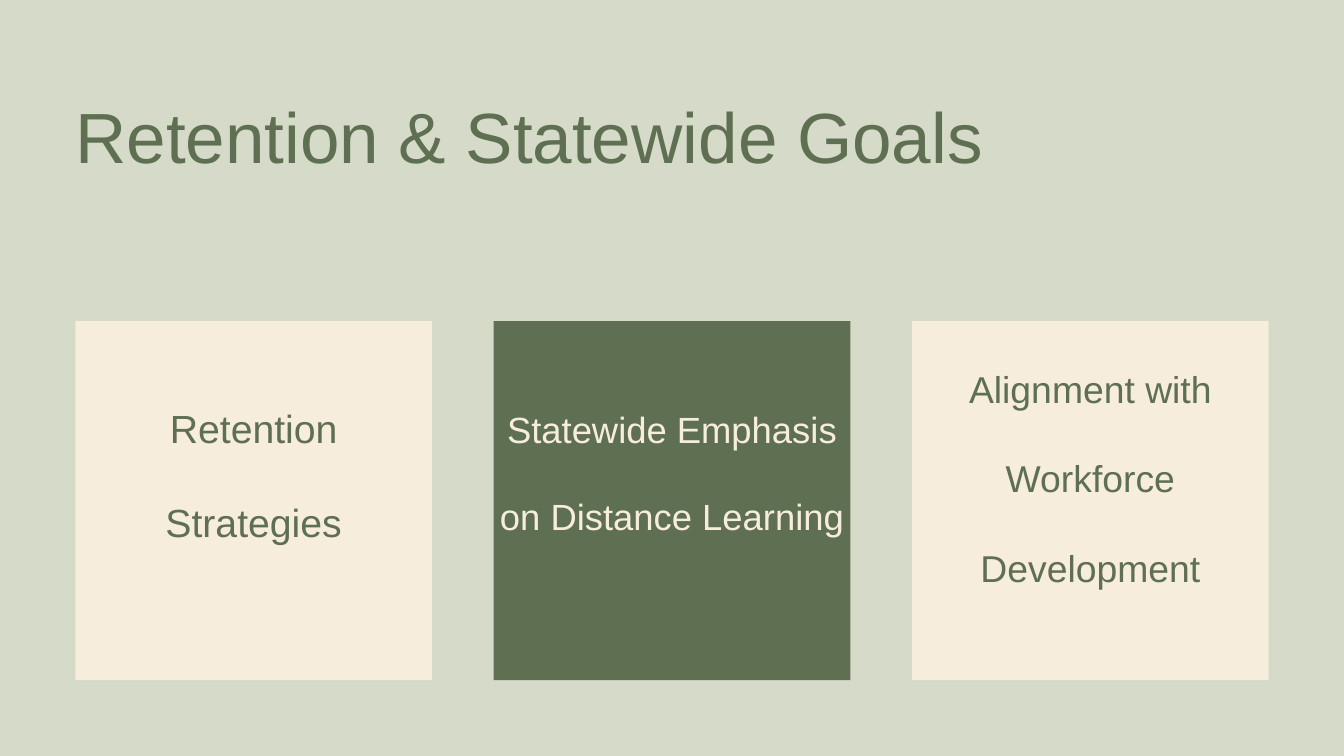
from dataclasses import dataclass

from pptx import Presentation
from pptx.dml.color import RGBColor
from pptx.enum.shapes import MSO_SHAPE
from pptx.enum.text import MSO_ANCHOR, MSO_AUTO_SIZE, PP_ALIGN
from pptx.util import Inches, Pt

RECTANGLE = MSO_SHAPE.RECTANGLE
TOP, MIDDLE, BOTTOM = MSO_ANCHOR.TOP, MSO_ANCHOR.MIDDLE, MSO_ANCHOR.BOTTOM
LEFT, CENTER = PP_ALIGN.LEFT, PP_ALIGN.CENTER
NO_AUTOFIT = MSO_AUTO_SIZE.NONE
TITLE_ONLY = 5


@dataclass(frozen=True)
class Theme:
    sage: RGBColor = RGBColor.from_string("D6DAC8")
    forest: RGBColor = RGBColor.from_string("5F6F52")
    cream: RGBColor = RGBColor.from_string("F6EDDD")
    font: str = "Arial"
    title_size: float = 76.1
    retention_size: float = 42
    emphasis_size: float = 39
    alignment_size: float = 40


THEME = Theme()
MARGIN = 1.12
CARD_TOP, CARD_WIDTH, CARD_HEIGHT = 4.78, 5.31, 5.34
CARD_STEP = 6.225

GOALS = [
    ("Retention Strategies", THEME.retention_size, THEME.cream, THEME.forest, MIDDLE, 1.48),
    ("Statewide Emphasis on Distance Learning", THEME.emphasis_size, THEME.forest, THEME.cream, MIDDLE, 1.48),
    ("Alignment with Workforce Development", THEME.alignment_size, THEME.cream, THEME.forest, BOTTOM, 1.34),
]


def write(frame, wording, size, color, align, line_spacing, anchor, side=0, bottom=0):
    frame.text = wording
    frame.word_wrap = True
    frame.auto_size = NO_AUTOFIT
    frame.vertical_anchor = anchor
    frame.margin_left = frame.margin_right = Inches(side)
    frame.margin_top = Inches(0)
    frame.margin_bottom = Inches(bottom)
    paragraph = frame.paragraphs[0]
    paragraph.alignment = align
    paragraph.line_spacing = line_spacing
    font = paragraph.runs[0].font
    font.name = THEME.font
    font.size = Pt(size)
    font.color.rgb = color


def place_title(slide, left, top, width, height):
    heading = slide.shapes.title
    heading.left, heading.top = Inches(left), Inches(top)
    heading.width, heading.height = Inches(width), Inches(height)
    write(heading.text_frame, "Retention & Statewide Goals", THEME.title_size,
          THEME.forest, LEFT, 1.21, TOP)


def add_goal_card(slide, left, top, width, height, goal):
    wording, size, fill, color, anchor, bottom = goal
    card = slide.shapes.add_shape(RECTANGLE, Inches(left), Inches(top), Inches(width), Inches(height))
    card.shadow.inherit = False
    card.fill.solid()
    card.fill.fore_color.rgb = fill
    card.line.fill.background()
    write(card.text_frame, wording, size, color, CENTER, 2.0, anchor, 0.06, bottom)


def main():
    deck = Presentation()
    deck.slide_width, deck.slide_height = Inches(20), Inches(11.25)
    slide = deck.slides.add_slide(deck.slide_layouts[TITLE_ONLY])
    slide.background.fill.solid()
    slide.background.fill.fore_color.rgb = THEME.sage
    place_title(slide, MARGIN, 1.11, 17.75, 1.28)
    for column, goal in enumerate(GOALS):
        add_goal_card(slide, MARGIN + column * CARD_STEP, CARD_TOP, CARD_WIDTH, CARD_HEIGHT, goal)
    deck.save("out.pptx")


if __name__ == "__main__":
    main()
